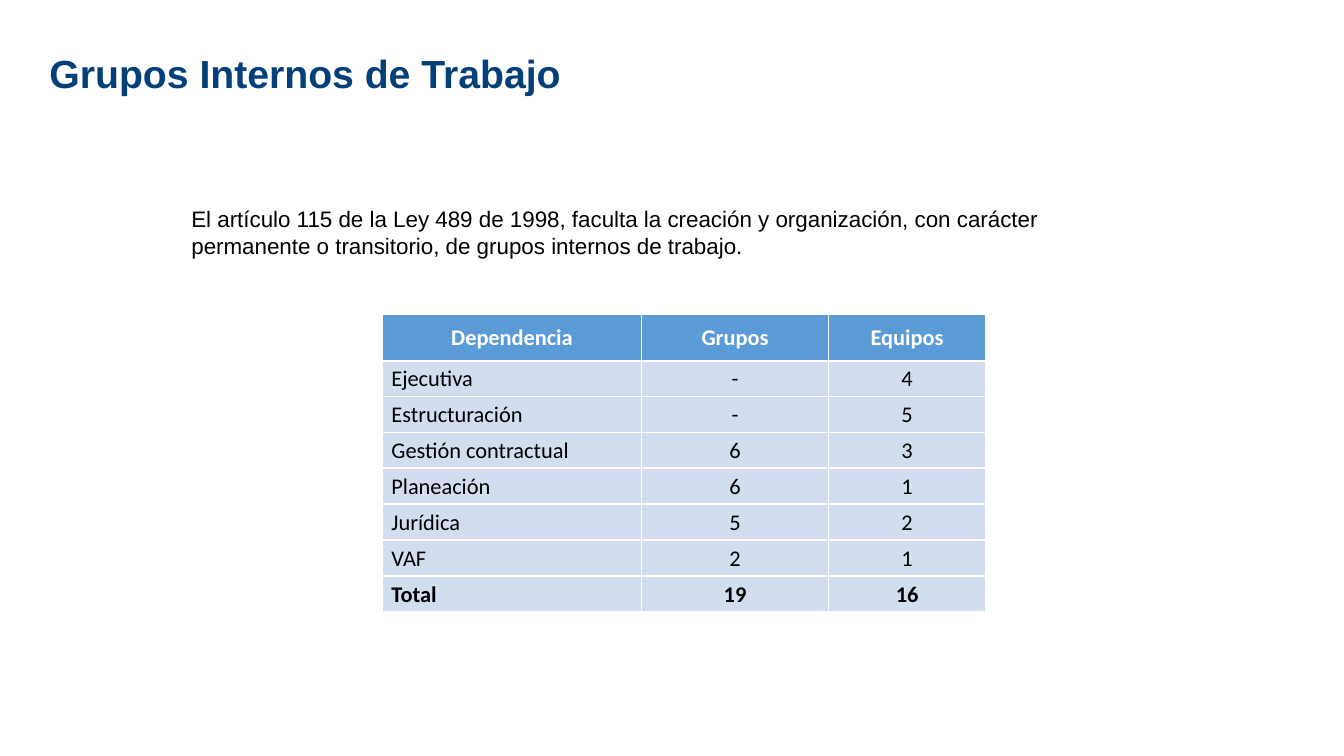
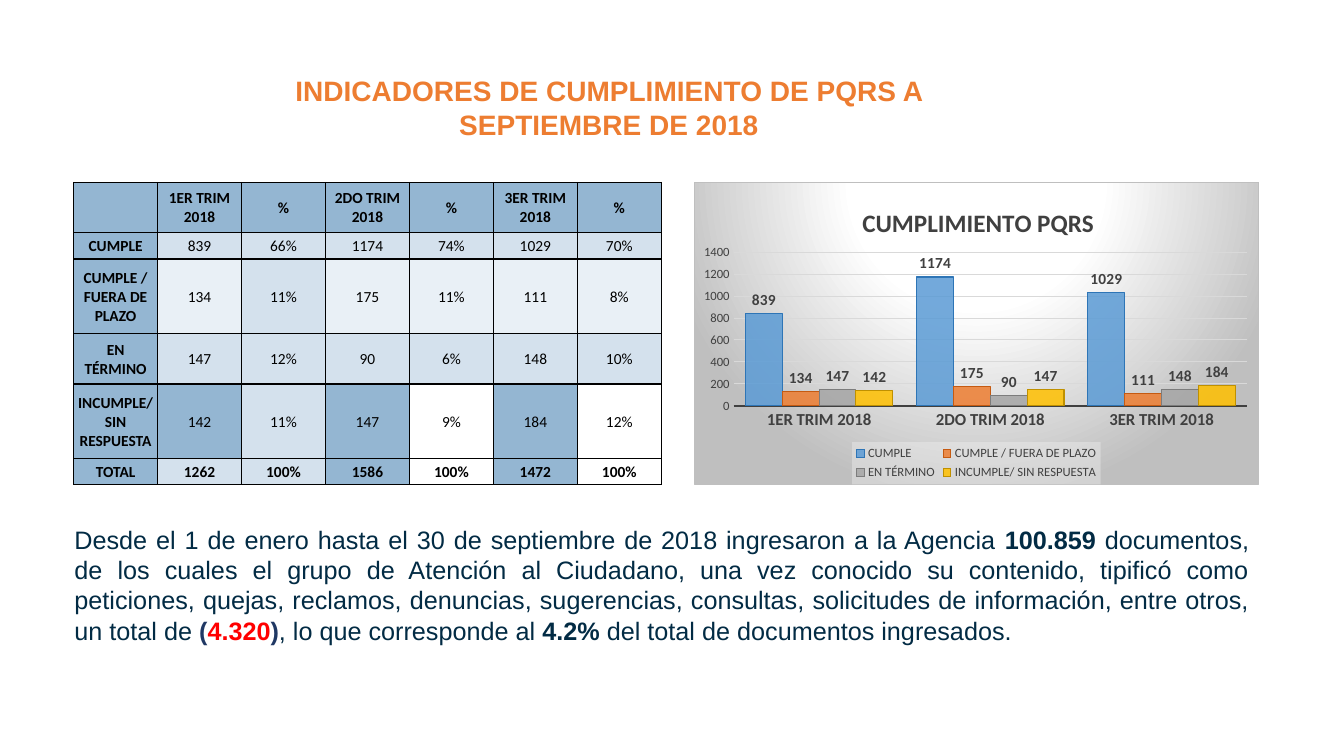
from dataclasses import dataclass
from typing import NamedTuple

from lxml.etree import SubElement
from pptx import Presentation
from pptx.chart.data import CategoryChartData
from pptx.dml.color import RGBColor
from pptx.enum.chart import XL_CHART_TYPE, XL_LABEL_POSITION, XL_LEGEND_POSITION, XL_TICK_MARK
from pptx.enum.text import MSO_ANCHOR, MSO_AUTO_SIZE, PP_ALIGN
from pptx.oxml import parse_xml
from pptx.oxml.ns import nsdecls, qn
from pptx.util import Inches, Pt

SLIDE_WIDTH = Inches(13.33)
SLIDE_HEIGHT = Inches(7.5)
TITLE_ONLY = 5
HEADING_FONT = "Arial"
DATA_FONT = "Calibri"

BLACK = RGBColor(0x00, 0x00, 0x00)
WHITE = RGBColor(0xFF, 0xFF, 0xFF)
NAVY = RGBColor(0x03, 0x3F, 0x78)
ORANGE = RGBColor(0xED, 0x7D, 0x31)
INK = RGBColor(0x02, 0x2B, 0x44)
INDIGO = RGBColor(0x20, 0x38, 0x64)
RED = RGBColor(0xFF, 0x00, 0x00)
BLUE = RGBColor(0x5B, 0x9B, 0xD5)
ICE = RGBColor(0xD2, 0xDE, 0xEF)
STEEL = RGBColor(0x94, 0xB6, 0xD2)
MIST = RGBColor(0xD4, 0xE1, 0xED)
PALE = RGBColor(0xE9, 0xF0, 0xF6)
CHARCOAL = RGBColor(0x40, 0x40, 0x40)
GRID_GRAY = RGBColor(0xD9, 0xD9, 0xD9)
FILLS = {"B": BLUE, "I": ICE, "S": STEEL, "M": MIST, "P": PALE, "-": None}


class Area(NamedTuple):
    """Percentages of the slide's width and height."""

    left: float
    top: float
    width: float
    height: float

    def box(self) -> tuple[int, int, int, int]:
        return (
            int(SLIDE_WIDTH * self.left / 100),
            int(SLIDE_HEIGHT * self.top / 100),
            int(SLIDE_WIDTH * self.width / 100),
            int(SLIDE_HEIGHT * self.height / 100),
        )


class Span(NamedTuple):
    text: str
    color: RGBColor
    bold: bool = False


class Series(NamedTuple):
    name: str
    values: tuple[int, ...]
    fill: RGBColor
    line: RGBColor


@dataclass(frozen=True)
class TableStyle:
    size: float
    header_color: RGBColor
    border: RGBColor
    side_width: float
    rule_width: float
    label_align: PP_ALIGN
    label_inset: float
    bold_labels: bool


GROUP_STYLE = TableStyle(16, WHITE, WHITE, 1, 1.5, PP_ALIGN.LEFT, 0.09, False)
QUARTER_STYLE = TableStyle(11, BLACK, BLACK, 1, 1, PP_ALIGN.CENTER, 0.01, True)

GROUP_ROWS = [
    ("Dependencia", "Grupos", "Equipos"),
    ("Ejecutiva", "-", "4"),
    ("Estructuración", "-", "5"),
    ("Gestión contractual", "6", "3"),
    ("Planeación", "6", "1"),
    ("Jurídica", "5", "2"),
    ("VAF", "2", "1"),
    ("Total", "19", "16"),
]
QUARTERS = ("1ER TRIM 2018", "2DO TRIM 2018", "3ER TRIM 2018")
SERIES = [
    Series("CUMPLE", (839, 1174, 1029), BLUE, RGBColor(0x2E, 0x75, 0xB6)),
    Series("CUMPLE / FUERA DE PLAZO", (134, 175, 111), ORANGE, RGBColor(0xC5, 0x5A, 0x11)),
    Series("EN TÉRMINO", (147, 90, 148), RGBColor(0xA5, 0xA5, 0xA5), RGBColor(0x7C, 0x7C, 0x7C)),
    Series("INCUMPLE/ SIN RESPUESTA", (142, 147, 184), RGBColor(0xFF, 0xC0, 0x00), RGBColor(0xBF, 0x90, 0x00)),
]
QUARTER_FILLS = ["SSSSSSS", "SMMMMMM", "SPMPPPP", "SMMMMMM", "SSMS-S-", "SMMS-S-"]
SUMMARY = [
    Span("Desde el 1 de enero hasta el 30 de septiembre de 2018 ingresaron a la Agencia ", INK),
    Span("100.859", INK, True),
    Span(
        " documentos, de los cuales el grupo de Atención al Ciudadano, una vez conocido su contenido, "
        "tipificó como peticiones, quejas, reclamos, denuncias, sugerencias, consultas, solicitudes de "
        "información, entre otros, un total de ",
        INK,
    ),
    Span("(", INDIGO, True),
    Span("4.320", RED, True),
    Span(")", INDIGO, True),
    Span(", lo que corresponde al ", INK),
    Span("4.2% ", INK, True),
    Span("del total de documentos ingresados.", INK),
]


def style_font(font, name: str, size: float, color: RGBColor, bold: bool = False) -> None:
    font.name = name
    font.size = Pt(size)
    font.bold = bold
    font.color.rgb = color


def write_spans(frame, spans: list[Span], size: float, align: PP_ALIGN) -> None:
    frame.word_wrap = True
    frame.auto_size = MSO_AUTO_SIZE.NONE
    frame.vertical_anchor = MSO_ANCHOR.TOP
    para = frame.paragraphs[0]
    para.alignment = align
    for span in spans:
        run = para.add_run()
        run.text = span.text
        style_font(run.font, HEADING_FONT, size, span.color, span.bold)


def add_page(deck, title: str, area: Area, size: float, color: RGBColor, align: PP_ALIGN):
    page = deck.slides.add_slide(deck.slide_layouts[TITLE_ONLY])
    heading = page.shapes.title
    heading.left, heading.top, heading.width, heading.height = area.box()
    write_spans(heading.text_frame, [Span(title, color, True)], size, align)
    return page


def add_text(page, area: Area, spans: list[Span], size: float, align: PP_ALIGN) -> None:
    box = page.shapes.add_textbox(*area.box())
    write_spans(box.text_frame, spans, size, align)


def set_borders(cell, style: TableStyle) -> None:
    properties = cell._tc.get_or_add_tcPr()
    widths = (style.side_width, style.side_width, style.rule_width, style.rule_width)
    for index, (side, width) in enumerate(zip("LRTB", widths)):
        line = parse_xml(
            f'<a:ln{side} {nsdecls("a")} w="{Pt(width)}"><a:solidFill>'
            f'<a:srgbClr val="{style.border}"/></a:solidFill></a:ln{side}>'
        )
        properties.insert(index, line)


def add_data_table(
    page, area: Area, rows: list[tuple[str, ...]], fills: list[str],
    column_shares: list[float], row_shares: list[float], style: TableStyle,
) -> None:
    left, top, width, height = area.box()
    table = page.shapes.add_table(len(rows), len(rows[0]), left, top, width, height).table
    table.horz_banding = False
    for column, share in zip(table.columns, column_shares):
        column.width = int(width * share / sum(column_shares))
    for row, share in zip(table.rows, row_shares):
        row.height = int(height * share / sum(row_shares))
    last = len(rows) - 1
    for row_index, (texts, codes) in enumerate(zip(rows, fills)):
        for column_index, (text, code) in enumerate(zip(texts, codes)):
            cell = table.cell(row_index, column_index)
            is_header = row_index == 0
            is_label = column_index == 0 and not is_header
            cell.vertical_anchor = MSO_ANCHOR.MIDDLE
            cell.margin_left = Inches(style.label_inset if is_label else 0.01)
            cell.margin_right = cell.margin_top = Inches(0.01)
            cell.margin_bottom = 0
            if FILLS[code] is None:
                cell.fill.background()
            else:
                cell.fill.solid()
                cell.fill.fore_color.rgb = FILLS[code]
            set_borders(cell, style)
            para = cell.text_frame.paragraphs[0]
            para.text = text
            para.alignment = style.label_align if is_label else PP_ALIGN.CENTER
            bold = row_index in (0, last) or (is_label and style.bold_labels)
            color = style.header_color if is_header else BLACK
            style_font(para.font, DATA_FONT, style.size, color, bold)
            for run in para.runs:
                style_font(run.font, DATA_FONT, style.size, color, bold)


def place_part(part, index: int, **shares: float) -> None:
    for old in part.findall(qn("c:layout")):
        part.remove(old)
    layout = parse_xml(f'<c:layout {nsdecls("c")}><c:manualLayout/></c:layout>')
    manual = layout[0]
    if part.tag == qn("c:plotArea"):
        SubElement(manual, qn("c:layoutTarget")).set("val", "inner")
    for axis in "xy":
        SubElement(manual, qn(f"c:{axis}Mode")).set("val", "edge")
    for name, share in shares.items():
        SubElement(manual, qn(f"c:{name}")).set("val", str(share))
    part.insert(index, layout)


def paint_chart_background(chart) -> None:
    stops = "".join(
        f'<a:gs pos="{position}"><a:srgbClr val="{color}"/></a:gs>'
        for position, color in ((0, "FFFFFF"), (39000, "FFFFFF"), (100000, "BFBFBF"))
    )
    chart.element.find(qn("c:chart")).addnext(parse_xml(
        f'<c:spPr {nsdecls("c", "a")}><a:gradFill><a:gsLst>{stops}</a:gsLst><a:path path="circle">'
        '<a:fillToRect l="50000" t="-80000" r="50000" b="180000"/></a:path></a:gradFill>'
        f'<a:ln w="{Pt(0.75)}"><a:solidFill><a:srgbClr val="BFBFBF"/></a:solidFill></a:ln></c:spPr>'
    ))


def add_quarter_chart(page, area: Area) -> None:
    data = CategoryChartData()
    data.categories = QUARTERS
    for item in SERIES:
        data.add_series(item.name, item.values)
    chart = page.shapes.add_chart(XL_CHART_TYPE.COLUMN_CLUSTERED, *area.box(), data).chart
    style_font(chart.font, DATA_FONT, 10, BLACK)
    chart.has_title = True
    chart.chart_title.text_frame.text = "CUMPLIMIENTO PQRS"
    style_font(chart.chart_title.text_frame.paragraphs[0].runs[0].font, DATA_FONT, 18, CHARCOAL, True)
    chart.has_legend = True
    chart.legend.position = XL_LEGEND_POSITION.BOTTOM
    chart.legend.include_in_layout = False
    style_font(chart.legend.font, DATA_FONT, 9, CHARCOAL)

    plot = chart.plots[0]
    plot.gap_width = 65
    plot.overlap = 0
    plot.vary_by_categories = False
    for series, item in zip(plot.series, SERIES):
        series.format.fill.solid()
        series.format.fill.fore_color.rgb = item.fill
        tint = series._element.xpath("c:spPr/a:solidFill/a:srgbClr")[0]
        SubElement(tint, qn("a:alpha")).set("val", "85000")
        series.format.line.color.rgb = item.line
        series.format.line.width = Pt(0.75)
        labels = series.data_labels
        labels.show_value = True
        labels.position = XL_LABEL_POSITION.OUTSIDE_END
        style_font(labels.font, DATA_FONT, 11, CHARCOAL, True)

    for axis, size, bold in ((chart.category_axis, 12, True), (chart.value_axis, 9, False)):
        axis.major_tick_mark = axis.minor_tick_mark = XL_TICK_MARK.NONE
        style_font(axis.tick_labels.font, DATA_FONT, size, CHARCOAL, bold)
    chart.category_axis.format.line.color.rgb = CHARCOAL
    chart.category_axis.format.line.width = Pt(1.5)
    values = chart.value_axis
    values.minimum_scale, values.maximum_scale, values.major_unit = 0, 1400, 200
    values.format.line.fill.background()
    values.major_gridlines.format.line.color.rgb = GRID_GRAY
    values.major_gridlines.format.line.width = Pt(0.75)

    paint_chart_background(chart)
    title, plot_area, legend = (
        chart.element.find(qn("c:chart")).find(qn(f"c:{name}")) for name in ("title", "plotArea", "legend")
    )
    place_part(title, 1, x=0.29, y=0.06)
    place_part(plot_area, 0, x=0.07, y=0.23, w=0.91, h=0.51)
    place_part(legend, 1, x=0.28, y=0.86, w=0.44, h=0.14)
    legend.find(qn("c:overlay")).addnext(parse_xml(
        f'<c:spPr {nsdecls("c", "a")}><a:solidFill><a:srgbClr val="F2F2F2">'
        '<a:alpha val="39000"/></a:srgbClr></a:solidFill></c:spPr>'
    ))


def quarter_rows() -> list[tuple[str, ...]]:
    totals = [sum(column) for column in zip(*(item.values for item in SERIES))]
    rows = [("", *(text for quarter in QUARTERS for text in (quarter, "%")))]
    for name, counts in [(item.name, item.values) for item in SERIES] + [("TOTAL", totals)]:
        pairs = ((str(count), f"{count / total:.0%}") for count, total in zip(counts, totals))
        rows.append((name, *(text for pair in pairs for text in pair)))
    return rows


def main() -> None:
    deck = Presentation()
    deck.slide_width, deck.slide_height = SLIDE_WIDTH, SLIDE_HEIGHT

    groups = add_page(deck, "Grupos Internos de Trabajo", Area(2.93, 5.87, 66.83, 7.6), 28, NAVY, PP_ALIGN.LEFT)
    law = (
        "El artículo 115 de la Ley 489 de 1998, faculta la creación y organización, con carácter "
        "permanente o transitorio, de grupos internos de trabajo."
    )
    add_text(groups, Area(13.5, 26.5, 69.23, 8.5), [Span(law, BLACK)], 16, PP_ALIGN.LEFT)
    add_data_table(
        groups, Area(28.45, 41.5, 44.9, 39.5), GROUP_ROWS, ["BBB"] + ["III"] * 7,
        [2.57, 1.85, 1.56], [0.47] + [0.36] * 7, GROUP_STYLE,
    )

    indicators = add_page(
        deck, "INDICADORES DE CUMPLIMIENTO DE PQRS A SEPTIEMBRE DE 2018",
        Area(20.78, 9.07, 49.05, 10.27), 20, ORANGE, PP_ALIGN.CENTER,
    )
    add_data_table(
        indicators, Area(5.48, 24.13, 43.73, 40), quarter_rows(), QUARTER_FILLS,
        [1] * 7, [0.5, 0.26, 0.74, 0.5, 0.74, 0.26], QUARTER_STYLE,
    )
    add_quarter_chart(indicators, Area(51.6, 24.13, 42.08, 40))
    add_text(indicators, Area(4.8, 68.67, 88.88, 22), SUMMARY, 18, PP_ALIGN.JUSTIFY)
    deck.save("out.pptx")


if __name__ == "__main__":
    main()
